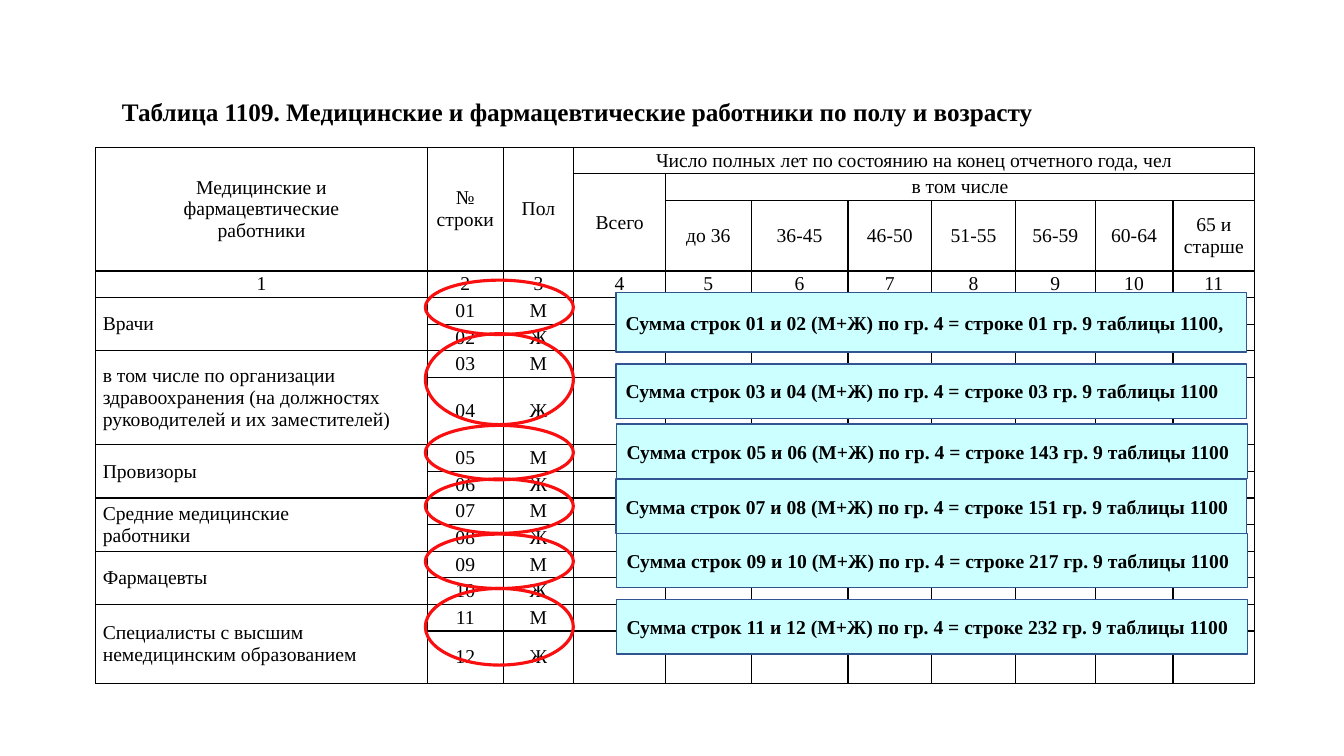
from dataclasses import dataclass

from lxml import etree
from pptx import Presentation
from pptx import util as u
from pptx.dml.color import RGBColor
from pptx.enum import shapes, text
from pptx.oxml.ns import qn
from pptx.util import Cm


@dataclass(frozen=True)
class Theme:
    font: str = "Times New Roman"
    title_size: int = 18
    body_size: int = 14
    ink: str = "000000"
    note_fill: str = "CCFFFF"
    note_line: str = "325491"
    mark_line: str = "F90F0F"


THEME = Theme()

# Table geometry in centimetres
TABLE_LEFT, TABLE_TOP = 2.41, 3.71
COL_WIDTHS = [8.36, 1.91, 1.78, 2.31, 2.16, 2.44, 2.11, 2.11, 2.01, 1.96, 2.06]
ROW_HEIGHT = 0.67
TALL_ROWS = {2: 1.77, 7: 1.7, 15: 1.32}
FIRST_BODY_ROW = 4

# Header cells: row, column, row span, column span, wording
HEADERS = [
    (0, 0, 3, 1, "Медицинские и\nфармацевтические\nработники"),
    (0, 1, 3, 1, "№ строки"),
    (0, 2, 3, 1, "Пол"),
    (0, 3, 1, 8, "Число полных лет по состоянию на конец отчетного года, чел"),
    (1, 3, 2, 1, "Всего"),
    (1, 4, 1, 7, "в том числе"),
]
AGES = ["до 36", "36-45", "46-50", "51-55", "56-59", "60-64", "65 и старше"]
STAFF = [
    "Врачи",
    "в том числе по организации здравоохранения (на должностях "
    "руководителей и их заместителей)",
    "Провизоры",
    "Средние медицинские\nработники",
    "Фармацевты",
    "Специалисты с высшим немедицинским образованием",
]

# Per staff group: mark top and height, note left, top and height, target row, ending
CHECKS = [
    (7.06, 1.37, 15.52, 7.37, 1.5, "01", ","),
    (8.41, 2.29, 15.52, 9.17, 1.37, "03", ""),
    (10.72, 1.37, 15.54, 10.69, 1.37, "143", ""),
    (12.07, 1.37, 15.52, 12.07, 1.37, "151", ""),
    (13.46, 1.37, 15.54, 13.44, 1.37, "217", ""),
    (14.83, 1.93, 15.54, 15.11, 1.37, "232", ""),
]
MARK_LEFT, MARK_WIDTH, NOTE_WIDTH = 10.72, 3.73, 15.9


def rgb(value):
    return RGBColor.from_string(value)


def style_text(tf, size, bold=False, align=text.PP_ALIGN.LEFT):
    for p in tf.paragraphs:
        p.alignment = align
        for r in p.runs:
            r.font.name = THEME.font
            r.font.size = u.Pt(size)
            r.font.bold = bold
            r.font.color.rgb = rgb(THEME.ink)


def add_title(s, wording):
    sp = s.shapes.title
    sp.left, sp.top, sp.width, sp.height = Cm(2.82), Cm(2.29), Cm(28.6), Cm(1.02)
    tf = sp.text_frame
    tf.text = wording
    tf.word_wrap = True
    tf.auto_size = text.MSO_AUTO_SIZE.SHAPE_TO_FIT_TEXT
    tf.vertical_anchor = text.MSO_ANCHOR.MIDDLE
    style_text(tf, THEME.title_size, bold=True)


def format_cell(cell):
    cell.margin_left = cell.margin_right = Cm(0.18)
    cell.margin_top = cell.margin_bottom = 0
    cell.vertical_anchor = text.MSO_ANCHOR.MIDDLE
    cell.fill.background()
    tc_pr = cell._tc.get_or_add_tcPr()
    for i, side in enumerate(("lnL", "lnR", "lnT", "lnB")):
        ln = etree.Element(qn(f"a:{side}"), w=str(u.Pt(1)))
        fill = etree.SubElement(ln, qn("a:solidFill"))
        etree.SubElement(fill, qn("a:srgbClr"), val=THEME.ink)
        tc_pr.insert(i, ln)
    # Keeps empty cells as low as the filled ones
    if not cell.text:
        p = cell.text_frame.paragraphs[0]
        etree.SubElement(p._p, qn("a:endParaRPr"), sz=str(THEME.body_size * 100))


def fill_cell(table, row, col, wording, rows=1, cols=1, align=text.PP_ALIGN.CENTER):
    cell = table.cell(row, col)
    if rows * cols > 1:
        cell.merge(table.cell(row + rows - 1, col + cols - 1))
    cell.text = wording
    style_text(cell.text_frame, THEME.body_size, align=align)


def add_staff_table(s):
    heights = [TALL_ROWS.get(i, ROW_HEIGHT)
               for i in range(FIRST_BODY_ROW + 2 * len(STAFF))]
    frame = s.shapes.add_table(len(heights), len(COL_WIDTHS), Cm(TABLE_LEFT),
                               Cm(TABLE_TOP), Cm(sum(COL_WIDTHS)), Cm(sum(heights)))
    table = frame.table
    table.first_row = table.horz_banding = False
    for column, width in zip(table.columns, COL_WIDTHS):
        column.width = Cm(width)
    for row, height in zip(table.rows, heights):
        row.height = Cm(height)

    # Header and column numbers
    for row, col, rows, cols, wording in HEADERS:
        fill_cell(table, row, col, wording, rows, cols)
    for col, age in enumerate(AGES, start=4):
        fill_cell(table, 2, col, age)
    for col in range(len(COL_WIDTHS)):
        fill_cell(table, 3, col, str(col + 1))

    # Two rows, men and women, for each staff group
    for group, name in enumerate(STAFF):
        top = FIRST_BODY_ROW + 2 * group
        fill_cell(table, top, 0, name, rows=2, align=text.PP_ALIGN.LEFT)
        for i, sex in enumerate("МЖ"):
            fill_cell(table, top + i, 1, f"{2 * group + i + 1:02}")
            fill_cell(table, top + i, 2, sex)

    for cell in table.iter_cells():
        format_cell(cell)


def add_outlined(s, kind, left, top, width, height, line, weight):
    sp = s.shapes.add_shape(kind, Cm(left), Cm(top), Cm(width), Cm(height))
    sp.shadow.inherit = False
    sp.fill.background()
    sp.line.color.rgb = rgb(line)
    sp.line.width = u.Pt(weight)
    return sp


def add_mark(s, top, height):
    add_outlined(s, shapes.MSO_SHAPE.OVAL, MARK_LEFT, top, MARK_WIDTH, height,
                 THEME.mark_line, 2.25)


def add_note(s, left, top, height, wording):
    sp = add_outlined(s, shapes.MSO_SHAPE.RECTANGLE, left, top, NOTE_WIDTH, height,
                      THEME.note_line, 1)
    sp.fill.solid()
    sp.fill.fore_color.rgb = rgb(THEME.note_fill)
    tf = sp.text_frame
    tf.text = wording
    tf.word_wrap = True
    tf.vertical_anchor = text.MSO_ANCHOR.MIDDLE
    style_text(tf, THEME.body_size, bold=True)


def main():
    prs = Presentation()
    prs.slide_width, prs.slide_height = Cm(33.87), Cm(19.05)
    s = prs.slides.add_slide(prs.slide_layouts.get_by_name("Title Only"))

    add_title(s, "Таблица 1109. Медицинские и фармацевтические работники "
                 "по полу и возрасту")
    add_staff_table(s)

    # Row pairs and the checks that apply to them
    for group, check in enumerate(CHECKS):
        mark_top, mark_height, left, top, height, target, ending = check
        first = 2 * group + 1
        add_mark(s, mark_top, mark_height)
        add_note(s, left, top, height,
                 f"Сумма строк {first:02} и {first + 1:02} (М+Ж) по гр. 4 = "
                 f"строке {target} гр. 9 таблицы 1100{ending}")

    prs.save("out.pptx")


if __name__ == "__main__":
    main()
